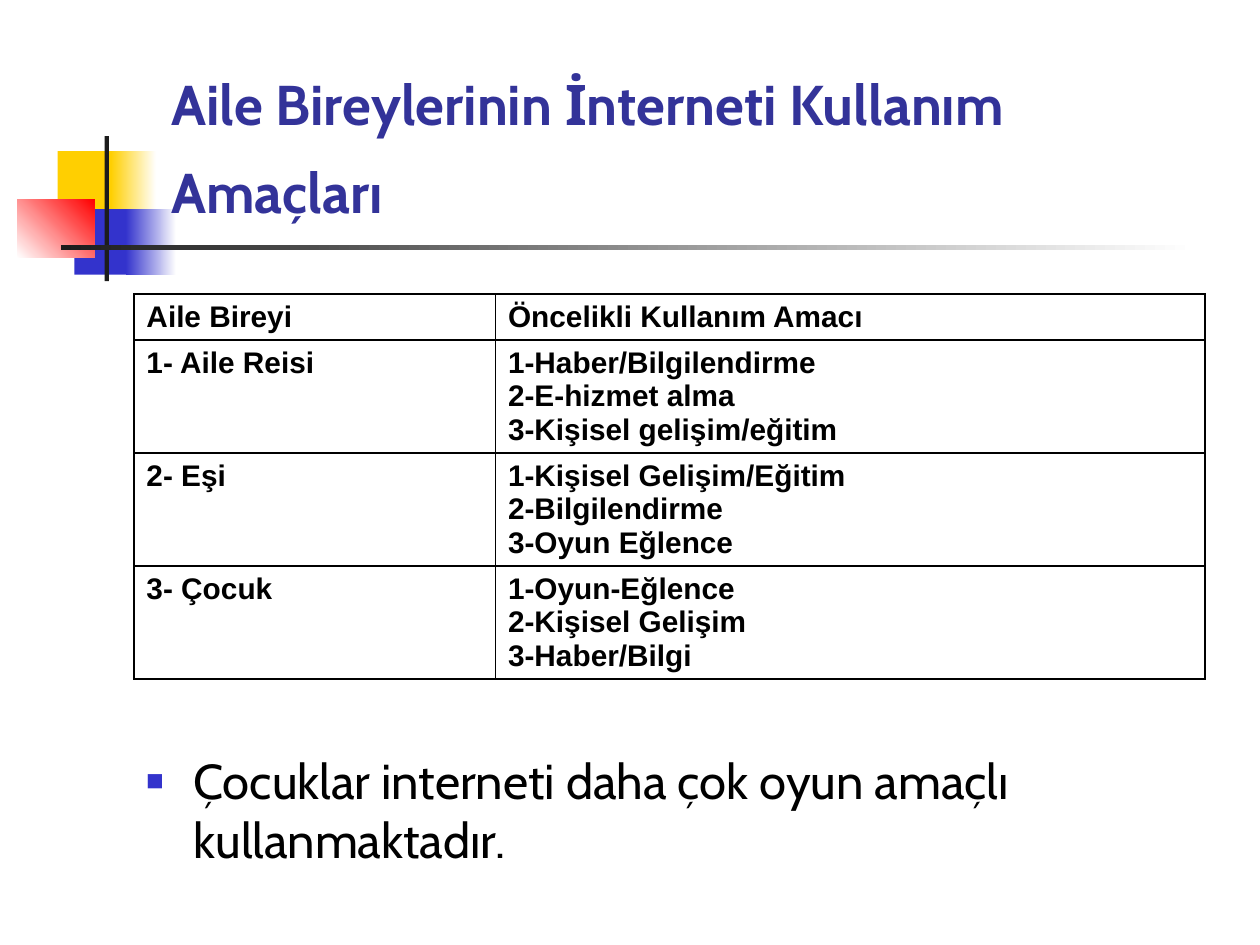
from dataclasses import dataclass
from typing import NamedTuple, Optional

from lxml import etree
from pptx import Presentation
from pptx.dml.color import RGBColor
from pptx.enum.shapes import MSO_SHAPE
from pptx.enum.text import MSO_ANCHOR, MSO_AUTO_SIZE, PP_ALIGN
from pptx.oxml.ns import qn
from pptx.util import Pt

RECT = MSO_SHAPE.RECTANGLE
BOTTOM, TOP = MSO_ANCHOR.BOTTOM, MSO_ANCHOR.TOP
LEFT, JUSTIFY = PP_ALIGN.LEFT, PP_ALIGN.JUSTIFY
FIXED = MSO_AUTO_SIZE.NONE


@dataclass(frozen=True)
class Theme:
    white: str = "FFFFFF"
    black: str = "000000"
    dark: str = "1C1C1C"
    gold: str = "FFCF01"
    blue: str = "3333CC"
    red: str = "FF0000"
    title: str = "333399"
    head_font: str = "Cabin"
    cell_font: str = "Arial"
    title_size: float = 32
    cell_size: float = 17
    body_size: float = 28
    hang: float = 27


class Box(NamedTuple):
    left: float
    top: float
    width: float
    height: float


class Block(NamedTuple):
    box: Box
    color: str
    fade: Optional[str] = None
    angle: float = 0


class Row(NamedTuple):
    member: str
    uses: str
    height: float


T = Theme()

BLOCKS = [
    Block(Box(33, 86.4, 34.6, 37.4), T.gold),
    Block(Box(63.4, 86.4, 25.9, 37.4), T.gold, T.white),
    Block(Box(42.5, 119.5, 33.1, 37.4), T.blue),
    Block(Box(72, 119.5, 28.8, 37.4), T.blue, T.white),
    Block(Box(10, 113.8, 44, 33.5), T.white, T.red, 45),
    Block(Box(59.8, 77.8, 2.4, 82.8), T.dark),
    Block(Box(34.8, 140.2, 648, 2.4), T.dark, T.white),
]

ROWS = [
    Row("Aile Bireyi", "Öncelikli Kullanım Amacı", 26.4),
    Row("1- Aile Reisi",
        "1-Haber/Bilgilendirme\n2-E-hizmet alma\n3-Kişisel gelişim/eğitim", 64.5),
    Row("2- Eşi",
        "1-Kişisel Gelişim/Eğitim\n2-Bilgilendirme\n3-Oyun Eğlence", 64.5),
    Row("3- Çocuk",
        "1-Oyun-Eğlence\n2-Kişisel Gelişim\n3-Haber/Bilgi", 64.5),
]
COLS = (206.6, 405.4)


def rgb(code: str) -> RGBColor:
    return RGBColor.from_string(code)


def points(box: Box) -> list:
    return [Pt(v) for v in box]


def style(para, font: str, size: float, color: str, bold: bool = False) -> None:
    for run in para.runs:
        run.font.name = font
        run.font.size = Pt(size)
        run.font.bold = bold
        run.font.color.rgb = rgb(color)


def indent(para) -> None:
    props = para._p.get_or_add_pPr()
    props.set("marL", str(Pt(T.hang)))
    props.set("indent", str(-Pt(T.hang)))


def draw_block(slide, block: Block) -> None:
    shape = slide.shapes.add_shape(RECT, *points(block.box))
    shape.shadow.inherit = False
    shape.line.fill.background()
    if block.fade is None:
        shape.fill.solid()
        shape.fill.fore_color.rgb = rgb(block.color)
        return
    shape.fill.gradient()
    shape.fill.gradient_angle = block.angle
    for stop, color in zip(shape.fill.gradient_stops, (block.color, block.fade)):
        stop.color.rgb = rgb(color)


def draw_title(slide, text: str, box: Box) -> None:
    title = slide.shapes.title
    title.left, title.top, title.width, title.height = points(box)
    frame = title.text_frame
    frame.text = text
    frame.word_wrap = True
    frame.auto_size = FIXED
    frame.vertical_anchor = BOTTOM
    para = frame.paragraphs[0]
    para.alignment = LEFT
    para.line_spacing = Pt(50)
    style(para, T.head_font, T.title_size, T.title, True)
    # Bring the title in front of the blocks
    slide.shapes._spTree.append(title._element)


def add_border(cell) -> None:
    props = cell._tc.get_or_add_tcPr()
    for place, side in enumerate(("a:lnL", "a:lnR", "a:lnT", "a:lnB")):
        line = etree.Element(qn(side), w=str(Pt(1)))
        fill = etree.SubElement(line, qn("a:solidFill"))
        etree.SubElement(fill, qn("a:srgbClr"), val=T.black)
        props.insert(place, line)


def fill_cell(cell, text: str) -> None:
    cell.fill.background()
    cell.vertical_anchor = TOP
    cell.text_frame.text = text
    for para in cell.text_frame.paragraphs:
        para.alignment = JUSTIFY
        indent(para)
        style(para, T.cell_font, T.cell_size, T.black, True)
    add_border(cell)


def draw_table(slide, left: float, top: float) -> None:
    box = Box(left, top, sum(COLS), sum(row.height for row in ROWS))
    table = slide.shapes.add_table(len(ROWS), len(COLS), *points(box)).table
    table.first_row = table.horz_banding = False
    for col, width in zip(table.columns, COLS):
        col.width = Pt(width)
    for i, row in enumerate(ROWS):
        table.rows[i].height = Pt(row.height)
        for j, text in enumerate((row.member, row.uses)):
            fill_cell(table.cell(i, j), text)


def draw_body(slide, text: str, box: Box) -> None:
    frame = slide.shapes.add_textbox(*points(box)).text_frame
    frame.word_wrap = True
    frame.margin_top = Pt(45)
    frame.text = text
    para = frame.paragraphs[0]
    indent(para)
    style(para, T.head_font, T.body_size, T.black)
    # Small square bullet
    props = para._p.get_or_add_pPr()
    color = etree.SubElement(props, qn("a:buClr"))
    etree.SubElement(color, qn("a:srgbClr"), val=T.blue)
    etree.SubElement(props, qn("a:buSzPct"), val="60000")
    etree.SubElement(props, qn("a:buFont"), typeface=T.cell_font)
    etree.SubElement(props, qn("a:buChar"), char="■")


def main() -> None:
    deck = Presentation()
    deck.slide_width, deck.slide_height = Pt(720), Pt(540)
    slide = deck.slides.add_slide(deck.slide_layouts[5])
    for block in BLOCKS:
        draw_block(slide, block)
    draw_title(slide, "Aile Bireylerinin İnterneti Kullanım Amaçları",
               Box(90.7, 16.6, 613.4, 115.2))
    draw_table(slide, 76.5, 168)
    draw_body(slide, "Çocuklar interneti daha çok oyun amaçlı kullanmaktadır.",
              Box(76.5, 384, 612, 156))
    deck.save("out.pptx")


if __name__ == "__main__":
    main()
